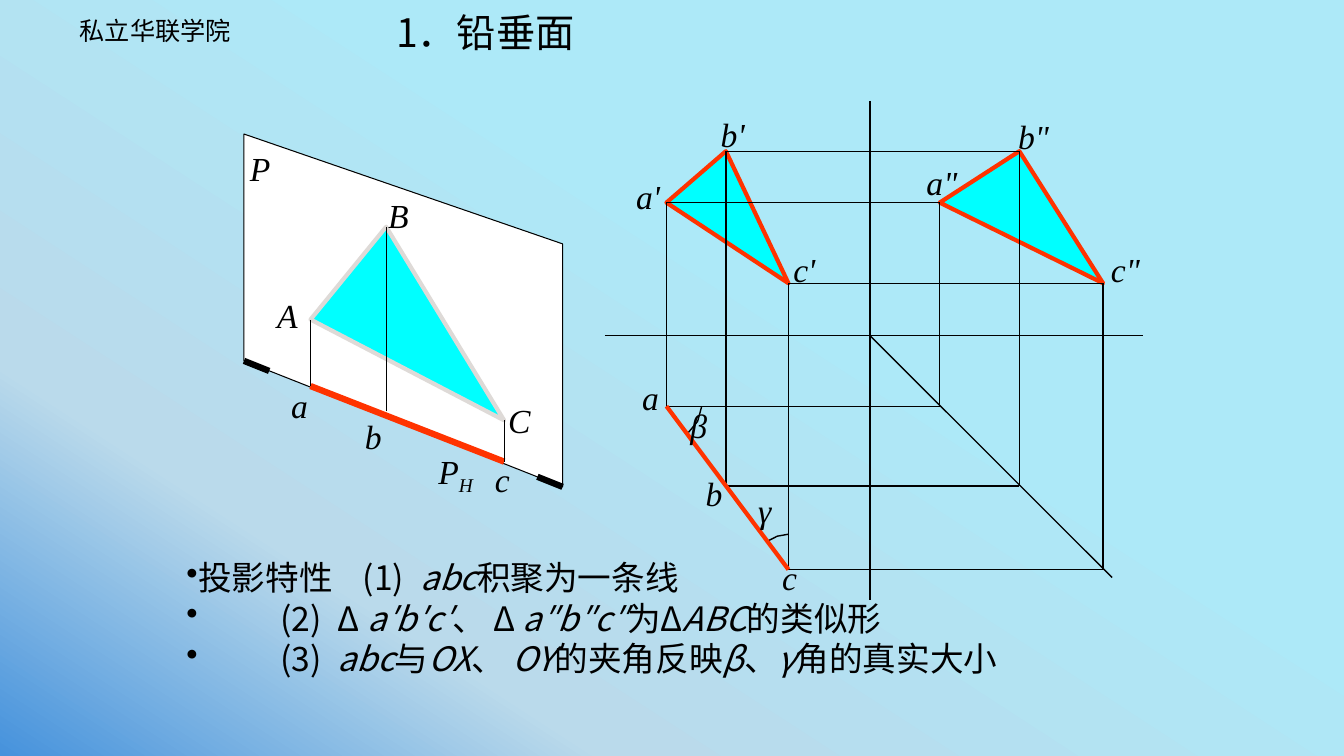
"""Build the slide on the projections of a vertical plane."""
from dataclasses import dataclass

from lxml.etree import SubElement
from pptx import Presentation
from pptx.dml.color import RGBColor
from pptx.enum.text import MSO_ANCHOR, MSO_AUTO_SIZE
from pptx.enum.shapes import MSO_CONNECTOR
from pptx.oxml.ns import qn
from pptx.util import Emu, Pt

EMU_PER_PX = 9144
COLORS = {"ink": "000000", "paper": "FFFFFF", "face": "00FFFF", "edge": "DEDAD7", "trace": "FF3300"}
BACKGROUND_STOPS = ((0, "4692DC"), (24, "BADAEB"), (62, "ADE9F8"), (100, "ADE9F8"))
SERIF, SANS, HEADER_FONT = "Times New Roman", "Noto Sans CJK SC", "Noto Sans CJK JP"
ORIGIN_X, ORIGIN_Y = 863, 333
Point = tuple[int, int]


@dataclass(frozen=True)
class Piece:
    text: str
    italic: bool = False
    subscript: bool = False


@dataclass(frozen=True)
class Label:
    text: str
    left: int
    top: int
    width: int = 78
    subscript: str = ""


@dataclass(frozen=True)
class Segment:
    start: Point
    end: Point
    weight: float = 1
    color: str = "ink"


@dataclass(frozen=True)
class Outline:
    points: tuple[Point, ...]
    line: str = "ink"
    weight: float = 1
    fill: str = ""


@dataclass(frozen=True)
class Vertex:
    front_x: int
    side_x: int
    height_y: int
    depth_y: int

    @property
    def front(self) -> Point:
        return self.front_x, self.height_y

    @property
    def side(self) -> Point:
        return self.side_x, self.height_y

    @property
    def plan(self) -> Point:
        return self.front_x, self.depth_y

    @property
    def turn(self) -> Point:
        return self.side_x, self.depth_y


@dataclass(frozen=True)
class Bullet:
    pieces: tuple[Piece, ...]
    tabs: tuple[int, ...]


VERTICES = (Vertex(661, 932, 201, 403), Vertex(720, 1011, 150, 482), Vertex(782, 1094, 281, 565))

PLANE = Outline(((242, 358), (242, 133), (558, 242), (558, 483)), weight=0.75, fill="paper")
SPACE_TRIANGLE = Outline(((308, 317), (500, 417), (383, 225)), "edge", 3, "face")
SPACE_SEGMENTS = (
    Segment((242, 358), (267, 368), 4.5),
    Segment((533, 473), (558, 483), 4.5),
    Segment((308, 383), (500, 458), 4.5, "trace"),
    Segment((308, 383), (308, 317), 0.75),
    Segment((500, 458), (500, 417), 0.75),
    Segment((383, 408), (383, 225), 0.75),
)
AXES = (
    Segment((600, ORIGIN_Y), (1134, ORIGIN_Y)),
    Segment((ORIGIN_X, 100), (ORIGIN_X, 595)),
    Segment((ORIGIN_X, ORIGIN_Y), (ORIGIN_X + 240, ORIGIN_Y + 240)),
)
ANGLE_ARCS = (
    Outline(((782, 530), (771, 532), (761, 537))),
    Outline(((682, 430), (692, 418), (696, 403))),
)
LABELS = (
    Label("P", 238, 142, 42), Label("P", 425, 442, 110, "H"),
    Label("A", 265, 288), Label("B", 375, 188), Label("C", 494, 392),
    Label("a", 279, 377), Label("b", 352, 408), Label("c", 481, 450),
    Label("a'", 621, 170), Label("b'", 705, 108), Label("c'", 777, 242),
    Label('a"', 909, 156), Label('b"', 1000, 110), Label('c"', 1092, 242),
    Label("a", 627, 369), Label("b", 690, 464), Label("c", 766, 548),
    Label("γ", 742, 481, 44), Label("β", 675, 397, 39),
)
BULLETS = (
    Bullet((Piece("投影特性\t(1)\t"), Piece("abc", True), Piece("积聚为一条线")), (175, 232)),
    Bullet((Piece("\t(2)\tΔ"), Piece(" a′b′c′", True), Piece("、 Δ "), Piece("a″b″c″", True),
            Piece("为Δ"), Piece("ABC", True), Piece("的类似形")), (93, 150)),
    Bullet((Piece("\t(3)\t"), Piece("abc", True), Piece("与"), Piece("OX", True), Piece("、 "),
            Piece("OY", True), Piece("的夹角反映"), Piece("β", True), Piece("、"),
            Piece("γ", True), Piece("角的真实大小")), (93, 150)),
)


def px(length: int) -> Emu:
    return Emu(length * EMU_PER_PX)


def rgb(name: str) -> RGBColor:
    return RGBColor.from_string(COLORS[name])


def paint_background(slide) -> None:
    fill = slide.background.fill
    fill.gradient()
    fill.gradient_angle = 57
    stop_list = slide.background._cSld.find(".//" + qn("a:gsLst"))
    for stop in list(stop_list):
        stop_list.remove(stop)
    for percent, color in BACKGROUND_STOPS:
        stop = SubElement(stop_list, qn("a:gs"), pos=str(percent * 1000))
        SubElement(stop, qn("a:srgbClr"), val=color)


def add_frame(slide, left: int, top: int, width: int, height: int):
    frame = slide.shapes.add_textbox(px(left), px(top), px(width), px(height)).text_frame
    frame.word_wrap = True
    frame.vertical_anchor = MSO_ANCHOR.TOP
    return frame


def add_pieces(paragraph, pieces: tuple[Piece, ...], size: int, font_name: str) -> None:
    for piece in pieces:
        run = paragraph.add_run()
        run.text = piece.text
        run.font.size = Pt(size)
        run.font.name = font_name
        run.font.italic = piece.italic
        run.font.color.rgb = rgb("ink")
        properties = run.font._element
        properties.find(qn("a:latin")).addnext(
            properties.makeelement(qn("a:ea"), {"typeface": font_name}))
        if piece.subscript:
            properties.set("baseline", "-25000")


def add_label(slide, label: Label) -> None:
    frame = add_frame(slide, label.left, label.top, label.width, 50)
    frame.auto_size = MSO_AUTO_SIZE.SHAPE_TO_FIT_TEXT
    pieces = (Piece(label.text, True),)
    if label.subscript:
        pieces += (Piece(label.subscript, True, True),)
    add_pieces(frame.paragraphs[0], pieces, 24, SERIF)


def add_segment(slide, segment: Segment) -> None:
    ends = [px(value) for value in segment.start + segment.end]
    connector = slide.shapes.add_connector(MSO_CONNECTOR.STRAIGHT, *ends)
    connector.line.color.rgb = rgb(segment.color)
    connector.line.width = Pt(segment.weight)
    SubElement(connector._element.spPr, qn("a:effectLst"))


def add_outline(slide, outline: Outline) -> None:
    builder = slide.shapes.build_freeform(*outline.points[0], scale=EMU_PER_PX)
    builder.add_line_segments(outline.points[1:], close=bool(outline.fill))
    shape = builder.convert_to_shape()
    shape.shadow.inherit = False
    shape.line.color.rgb = rgb(outline.line)
    shape.line.width = Pt(outline.weight)
    if outline.fill:
        shape.fill.solid()
        shape.fill.fore_color.rgb = rgb(outline.fill)
    else:
        shape.fill.background()


def add_bullets(slide) -> None:
    frame = add_frame(slide, 175, 548, 992, 183)
    for index, bullet in enumerate(BULLETS):
        paragraph = frame.add_paragraph() if index else frame.paragraphs[0]
        properties = paragraph._p.get_or_add_pPr()
        properties.set("marL", "0")
        properties.set("indent", "0")
        SubElement(properties, qn("a:buChar"), char="•")
        tab_list = SubElement(properties, qn("a:tabLst"))
        for tab in bullet.tabs:
            SubElement(tab_list, qn("a:tab"), pos=str(px(tab)), algn="l")
        paragraph.line_spacing = 1.0
        add_pieces(paragraph, bullet.pieces, 24, SANS)


def main() -> None:
    presentation = Presentation()
    presentation.slide_width, presentation.slide_height = px(1333), px(750)
    slide = presentation.slides.add_slide(presentation.slide_layouts[6])
    paint_background(slide)

    header = add_frame(slide, 74, 10, 294, 40)
    header.margin_left = header.margin_right = px(5)
    add_pieces(header.paragraphs[0], (Piece("私立华联学院"),), 18, HEADER_FONT)
    title = add_frame(slide, 383, 9, 579, 67).paragraphs[0]
    title.line_spacing = 0.9
    add_pieces(title, (Piece("1．铅垂面"),), 28, SANS)
    add_bullets(slide)

    front_view = Outline(tuple(vertex.front for vertex in VERTICES), "trace", 3, "face")
    side_view = Outline(tuple(vertex.side for vertex in VERTICES), "trace", 3, "face")
    for outline in (PLANE, SPACE_TRIANGLE, front_view, side_view, *ANGLE_ARCS):
        add_outline(slide, outline)
    projectors = [Segment(start, end) for vertex in VERTICES for start, end in (
        (vertex.front, vertex.plan), (vertex.front, vertex.side),
        (vertex.plan, vertex.turn), (vertex.side, vertex.turn))]
    plan_view = Segment(VERTICES[0].plan, VERTICES[-1].plan, 3, "trace")
    for segment in (*SPACE_SEGMENTS, *AXES, *projectors, plan_view):
        add_segment(slide, segment)
    for label in LABELS:
        add_label(slide, label)
    presentation.save("out.pptx")


if __name__ == "__main__":
    main()
